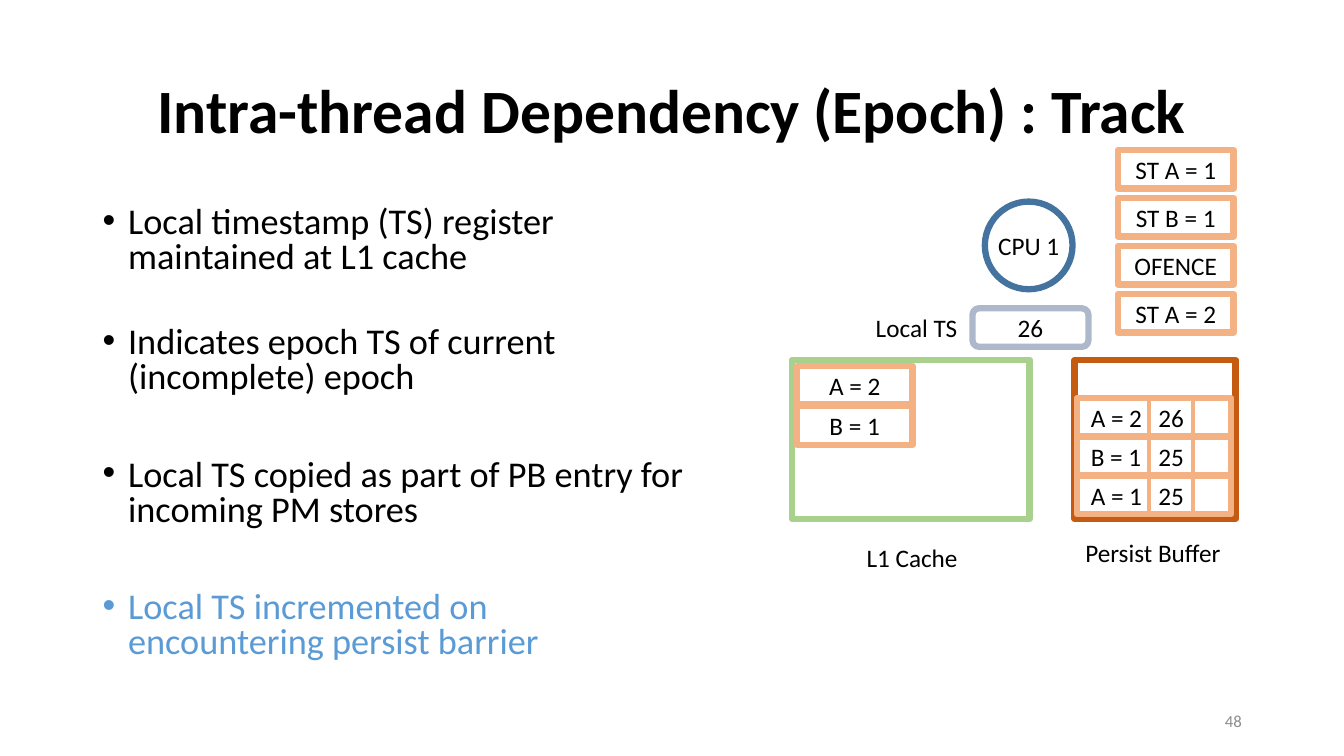
from dataclasses import dataclass

from lxml import etree
from pptx import Presentation
from pptx.dml.color import RGBColor
from pptx.enum.shapes import MSO_CONNECTOR, MSO_SHAPE
from pptx.enum.text import MSO_ANCHOR, PP_ALIGN
from pptx.oxml.ns import qn
from pptx.util import Cm, Pt

RECTANGLE, ROUNDED, OVAL = MSO_SHAPE.RECTANGLE, MSO_SHAPE.ROUNDED_RECTANGLE, MSO_SHAPE.OVAL
STRAIGHT = MSO_CONNECTOR.STRAIGHT
LEFT, CENTER, RIGHT = PP_ALIGN.LEFT, PP_ALIGN.CENTER, PP_ALIGN.RIGHT
TOP, MIDDLE = MSO_ANCHOR.TOP, MSO_ANCHOR.MIDDLE

FONT = "Calibri"
COLORS = {
    "text": "000000",
    "highlight": "5B9BD5",
    "number": "8C8C8C",
    "white": "FFFFFF",
    "cpu": "43739E",
    "cache": "A9D18E",
    "buffer": "C55A11",
    "register": "ADB9CA",
    "entry": "F4B183",
}


@dataclass
class Area:
    """A place on the slide, in centimetres."""
    left: float
    top: float
    width: float
    height: float

    def lengths(self) -> tuple:
        return Cm(self.left), Cm(self.top), Cm(self.width), Cm(self.height)


@dataclass
class Box:
    area: Area
    line: str
    text: str = ""
    outline: int = RECTANGLE
    filled: bool = True


@dataclass
class Label:
    area: Area
    text: str
    align: int = LEFT
    size: float = 18
    color: str = "text"


@dataclass
class Bullet:
    text: str
    space_before: float
    color: str = "text"


def rgb(name: str) -> RGBColor:
    return RGBColor.from_string(COLORS[name])


def set_values(target, values: dict) -> None:
    for name, value in values.items():
        setattr(target, name, value)


def write_paragraph(paragraph, text: str, size: float, color: str = "text",
                    bold: bool = False, **paragraph_values) -> None:
    run = paragraph.add_run()
    run.text = text
    set_values(run.font, {"name": FONT, "size": Pt(size), "bold": bold})
    run.font.color.rgb = rgb(color)
    set_values(paragraph, paragraph_values)


def add_box(slide, box: Box):
    shape = slide.shapes.add_shape(box.outline, *box.area.lengths())
    shape.shadow.inherit = False
    if box.filled:
        shape.fill.solid()
        shape.fill.fore_color.rgb = rgb("white")
    else:
        shape.fill.background()
    shape.line.color.rgb = rgb(box.line)
    shape.line.width = Pt(4.5)
    set_values(shape.text_frame, {"word_wrap": False, "vertical_anchor": MIDDLE,
                                  "margin_top": 0, "margin_bottom": 0})
    if box.text:
        write_paragraph(shape.text_frame.paragraphs[0], box.text, 18, alignment=CENTER)
    return shape


def add_label(slide, label: Label) -> None:
    frame = slide.shapes.add_textbox(*label.area.lengths()).text_frame
    set_values(frame, {"word_wrap": True, "vertical_anchor": MIDDLE})
    write_paragraph(frame.paragraphs[0], label.text, label.size, label.color,
                    alignment=label.align)


def add_divider(slide, x: float, top: float, height: float) -> None:
    line = slide.shapes.add_connector(STRAIGHT, Cm(x), Cm(top), Cm(x), Cm(top + height))
    line.line.color.rgb = rgb("entry")
    line.line.width = Pt(3)
    etree.SubElement(line._element.spPr, qn("a:effectLst"))


def add_buffer_entry(slide, top: float, store: str, timestamp: str) -> None:
    """Draw one persist buffer row: store, timestamp and an empty cell."""
    shape = add_box(slide, Box(Area(27.14, top, 3.89, 0.97), "entry"))
    shape.text_frame.margin_left = Cm(0.35)
    paragraph = shape.text_frame.paragraphs[0]
    write_paragraph(paragraph, f"{store}\t{timestamp}", 18, alignment=LEFT)
    tabs = etree.SubElement(paragraph._p.get_or_add_pPr(), qn("a:tabLst"))
    etree.SubElement(tabs, qn("a:tab"), pos=str(Cm(1.7)), algn="l")
    for x in (28.95, 30.07):
        add_divider(slide, x, top, 1)


def add_title(slide, area: Area, text: str) -> None:
    title = slide.shapes.title
    set_values(title, dict(zip(("left", "top", "width", "height"), area.lengths())))
    set_values(title.text_frame, {"word_wrap": True, "vertical_anchor": MIDDLE})
    write_paragraph(title.text_frame.paragraphs[0], text, 44, bold=True,
                    alignment=CENTER, line_spacing=0.9)


def add_bullets(slide, area: Area, bullets: list[Bullet]) -> None:
    frame = slide.shapes.add_textbox(*area.lengths()).text_frame
    set_values(frame, {"word_wrap": True, "vertical_anchor": TOP})
    for index, bullet in enumerate(bullets):
        paragraph = frame.add_paragraph() if index else frame.paragraphs[0]
        write_paragraph(paragraph, bullet.text, 25.9, bullet.color, alignment=LEFT,
                        line_spacing=0.8, space_before=Pt(bullet.space_before))
        properties = paragraph._p.get_or_add_pPr()
        properties.set("marL", str(Cm(0.64)))
        properties.set("indent", str(-Cm(0.64)))
        etree.SubElement(properties, qn("a:buFont"), typeface="Arial")
        etree.SubElement(properties, qn("a:buChar"), char="•")


BULLETS = [
    Bullet("Local timestamp (TS) register maintained at L1 cache", 10),
    Bullet("Indicates epoch TS of current (incomplete) epoch", 36),
    Bullet("Local TS copied as part of PB entry for incoming PM stores", 45),
    Bullet("Local TS incremented on encountering persist barrier", 45, "highlight"),
]
STORES = ["ST A = 1", "ST B = 1", "OFENCE", "ST A = 2"]
CACHE_LINES = ["A = 2", "B = 1"]
BUFFER_ENTRIES = [("A = 2", "26"), ("B = 1", "25"), ("A = 1", "25")]

BOXES = [
    Box(Area(24.82, 5.08, 2.21, 2.21), "cpu", "CPU 1", OVAL, filled=False),
    Box(Area(19.96, 9.07, 5.99, 4.01), "cache"),
    Box(Area(27.08, 9.07, 4.06, 4.01), "buffer"),
    Box(Area(24.51, 7.77, 2.92, 0.97), "register", "26", ROUNDED),
    *(Box(Area(28.17, 3.78 + 1.21 * row, 2.92, 0.97), "entry", text)
      for row, text in enumerate(STORES)),
    *(Box(Area(20.08, 9.22 + 1.02 * row, 2.92, 0.97), "entry", text)
      for row, text in enumerate(CACHE_LINES)),
]
LABELS = [
    Label(Area(21.82, 7.75, 2.59, 1.02), "Local TS"),
    Label(Area(21.59, 13.54, 3.6, 1.02), "L1 Cache"),
    Label(Area(26.97, 13.41, 4.17, 1.02), "Persist Buffer", CENTER),
    Label(Area(23.93, 17.65, 7.62, 1.02), "48", RIGHT, 12, "number"),
]


def main() -> None:
    presentation = Presentation()
    presentation.slide_width, presentation.slide_height = Cm(33.87), Cm(19.05)
    slide = presentation.slides.add_slide(presentation.slide_layouts.get_by_name("Title Only"))
    add_title(slide, Area(2.34, 1.02, 29.21, 3.68), "Intra-thread Dependency (Epoch) : Track")
    add_bullets(slide, Area(2.34, 5.08, 15.32, 12.09), BULLETS)
    for box in BOXES:
        add_box(slide, box)
    for row, (store, timestamp) in reversed(list(enumerate(BUFFER_ENTRIES))):
        add_buffer_entry(slide, 10.03 + 0.98 * row, store, timestamp)
    for label in LABELS:
        add_label(slide, label)
    presentation.save("out.pptx")


if __name__ == "__main__":
    main()
